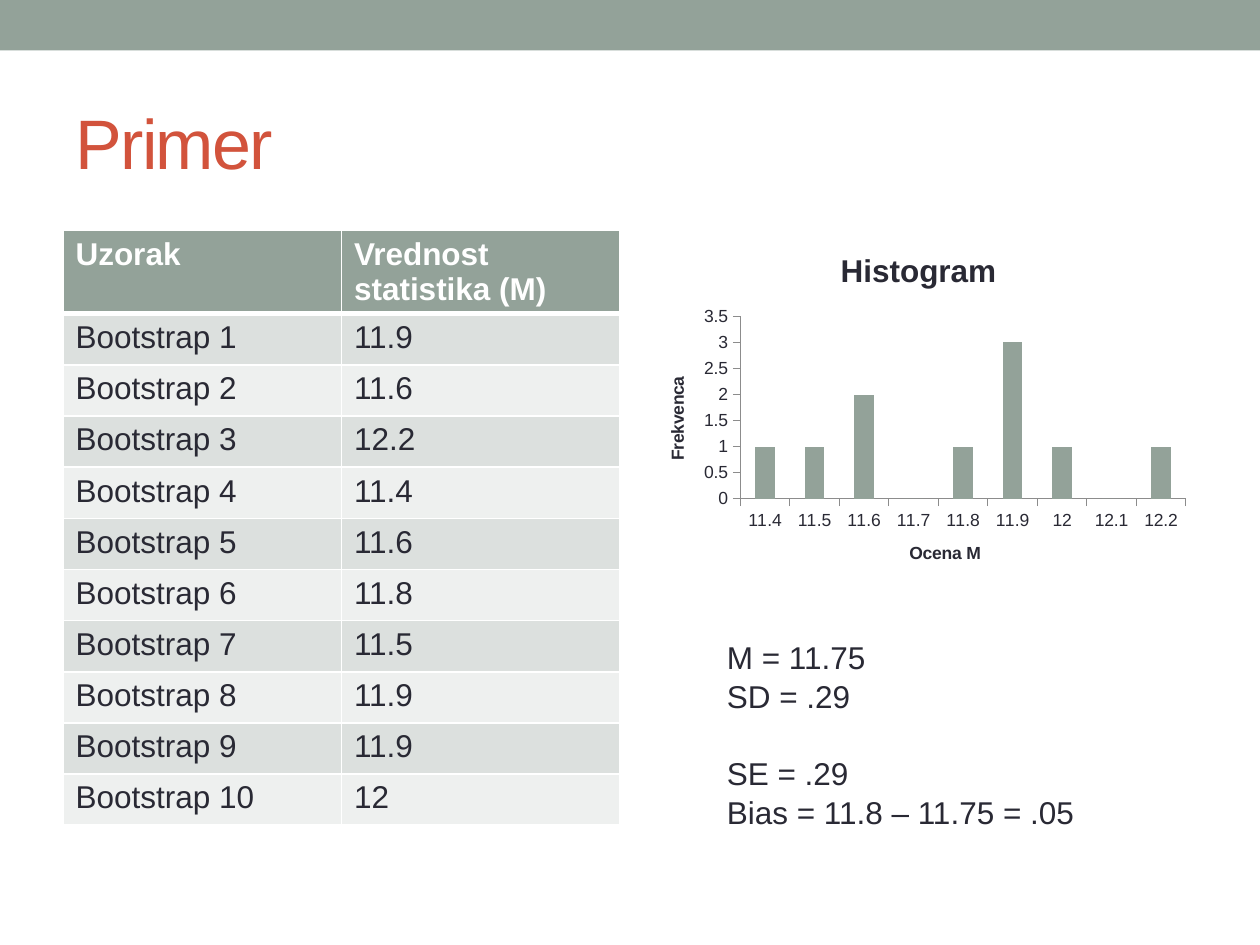
"""Builds a bootstrap example slide with a table, a histogram and summary statistics."""
import pptx
import pptx.chart.data
import pptx.dml.color
import pptx.enum.chart
import pptx.enum.shapes
import pptx.enum.text
import pptx.oxml
import pptx.oxml.ns
import pptx.util

Inches, Pt = pptx.util.Inches, pptx.util.Pt
HUES = {"sage": "93A299", "red": "D2533C", "ink": "292934", "white": "FFFFFF",
        "dark": "DCE0DE", "light": "EEF0EF", "axis": "8C8C8C"}
FONT = "Arial"
HEAD = ("Uzorak", "Vrednost statistika (M)")
MEANS = ("11.9", "11.6", "12.2", "11.4", "11.6", "11.8", "11.5", "11.9", "11.9", "12")
BINS = ("11.4", "11.5", "11.6", "11.7", "11.8", "11.9", "12", "12.1", "12.2")
COUNTS = (1, 1, 2, 0, 1, 3, 1, 0, 1)
STATS = (("M = 11.75", 0), ("SD = .29", 0), ("SE = .29", 21.5),
         ("Bias = 11.8 – 11.75 = .05", 0))
LAYOUT = {"x": 0.18, "y": 0.24, "w": 0.8, "h": 0.51}


def color(name):
    return pptx.dml.color.RGBColor.from_string(HUES[name])


def style(font, size, hue="ink", bold=False):
    font.name, font.size, font.bold = FONT, Pt(size), bold
    font.color.rgb = color(hue)


def write(para, text, size, hue="ink", bold=False):
    run = para.add_run()
    run.text = text
    style(run.font, size, hue, bold)
    return run


def paint(fill, hue):
    fill.solid()
    fill.fore_color.rgb = color(hue)


def border(cell, side, width):
    space = pptx.oxml.ns.nsdecls("a")
    cell._tc.get_or_add_tcPr().append(pptx.oxml.parse_xml(
        f'<a:ln{side} {space} w="{Pt(width)}"><a:solidFill>'
        f'<a:srgbClr val="{HUES["white"]}"/></a:solidFill></a:ln{side}>'))


deck = pptx.Presentation()
deck.slide_width, deck.slide_height = Inches(10), Inches(7.5)
slide = deck.slides.add_slide(deck.slide_layouts[5])

bar = slide.shapes.add_shape(pptx.enum.shapes.MSO_SHAPE.RECTANGLE,
                             0, 0, deck.slide_width, Inches(0.4))
bar.shadow.inherit = False
paint(bar.fill, "sage")
bar.line.fill.background()

title = slide.shapes.title
title.left, title.top = Inches(0.5), Inches(0.58)
title.width, title.height = Inches(9), Inches(1.08)
title.text_frame.vertical_anchor = pptx.enum.text.MSO_ANCHOR.MIDDLE
para = title.text_frame.paragraphs[0]
para.alignment = pptx.enum.text.PP_ALIGN.LEFT
run = write(para, "Primer", 40, "red")
run.font._element.set("spc", "-100")

rows = [HEAD] + [(f"Bootstrap {i}", mean) for i, mean in enumerate(MEANS, 1)]
top, body = Inches(0.65), Inches(4.06)
table = slide.shapes.add_table(len(rows), len(HEAD), Inches(0.5), Inches(1.83),
                               Inches(4.42), top + body).table
for r, texts in enumerate(rows):
    head = r == 0
    table.rows[r].height = top if head else body // len(MEANS)
    for c, text in enumerate(texts):
        cell = table.cell(r, c)
        write(cell.text_frame.paragraphs[0], text, 18, "white" if head else "ink", head)
        for side in "LRTB":
            thick = (head and side == "B") or (r == 1 and side == "T")
            border(cell, side, 3 if thick else 1)
        paint(cell.fill, "sage" if head else "dark" if r % 2 else "light")

box = slide.shapes.add_textbox(Inches(5.67), Inches(5), Inches(3.42), Inches(1.62))
frame = box.text_frame
frame.word_wrap = True
for i, (text, gap) in enumerate(STATS):
    para = frame.add_paragraph() if i else frame.paragraphs[0]
    para.line_spacing, para.space_before = 1.04, Pt(gap)
    write(para, text, 18)

data = pptx.chart.data.CategoryChartData()
data.categories = BINS
data.add_series("Series 1", COUNTS)
chart = slide.shapes.add_chart(pptx.enum.chart.XL_CHART_TYPE.COLUMN_CLUSTERED,
                               Inches(5.08), Inches(1.83), Inches(4.42), Inches(2.84),
                               data).chart
style(chart.font, 10)
chart.has_legend = False
chart.has_title = True
write(chart.chart_title.text_frame.paragraphs[0], "Histogram", 18, bold=True)
plot = chart.plots[0]
plot.gap_width, plot.vary_by_categories = 150, False
paint(plot.series[0].format.fill, "sage")
for axis, text in ((chart.category_axis, "Ocena M"), (chart.value_axis, "Frekvenca")):
    axis.has_major_gridlines = False
    axis.major_tick_mark = pptx.enum.chart.XL_TICK_MARK.OUTSIDE
    axis.format.line.color.rgb = color("axis")
    axis.format.line.width = Pt(0.75)
    write(axis.axis_title.text_frame.paragraphs[0], text, 10, bold=True)
values = chart.value_axis
values.minimum_scale, values.maximum_scale, values.major_unit = 0, 3.5, 0.5
values.tick_labels.number_format = "General"
values.tick_labels.number_format_is_linked = False

area = chart._chartSpace.chart.plotArea
for old in area.findall(pptx.oxml.ns.qn("c:layout")):
    area.remove(old)
parts = "".join(f'<c:{key} val="{val}"/>' for key, val in LAYOUT.items())
area.insert(0, pptx.oxml.parse_xml(
    f'<c:layout {pptx.oxml.ns.nsdecls("c")}><c:manualLayout><c:layoutTarget val="inner"/>'
    f'<c:xMode val="edge"/><c:yMode val="edge"/>{parts}</c:manualLayout></c:layout>'))

deck.save("out.pptx")
